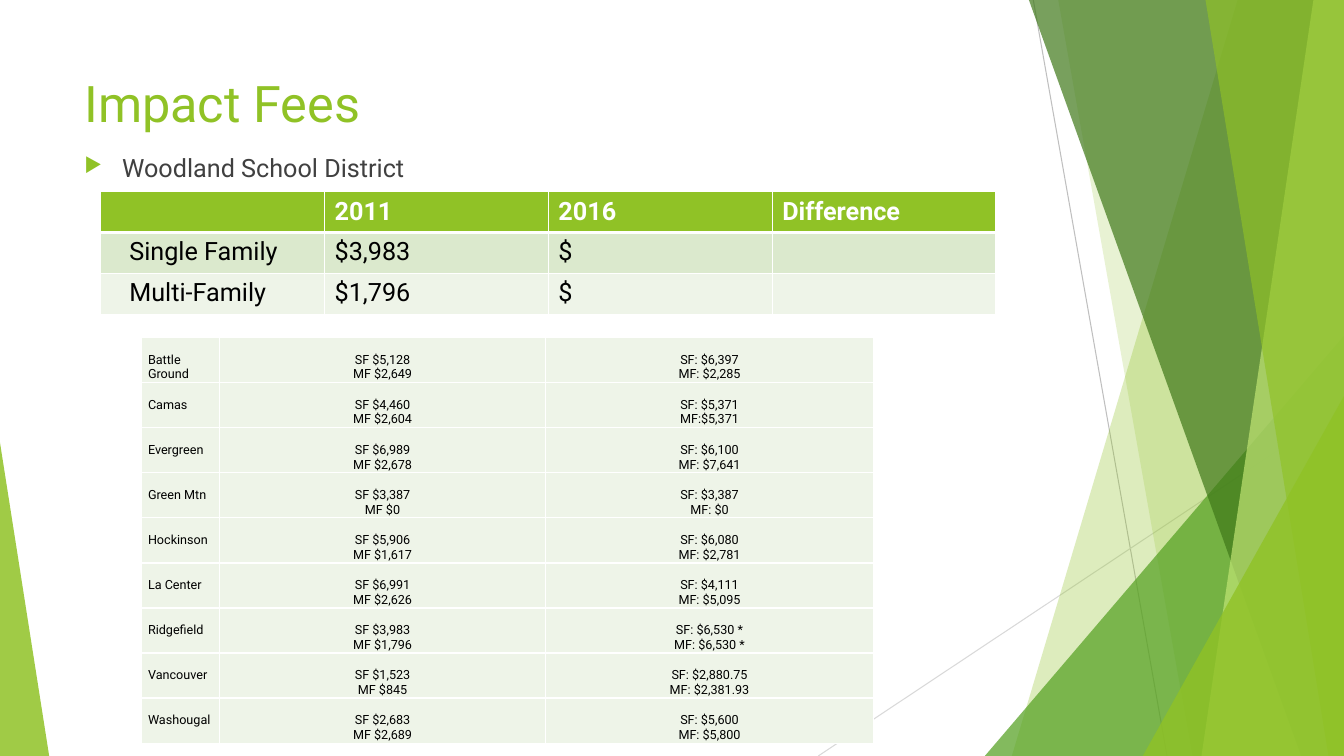
"""Build the Impact Fees slide with its faceted green background and two fee tables."""
import dataclasses
import typing

import lxml.etree
import pptx
import pptx.dml.color
import pptx.enum.shapes
import pptx.enum.text
import pptx.oxml.ns
import pptx.util

Cm = pptx.util.Cm
Pt = pptx.util.Pt
qn = pptx.oxml.ns.qn
ALIGN = pptx.enum.text.PP_ALIGN

WIDTH, HEIGHT = 33.87, 19.05
FONT = "Roboto"
GREEN, WHITE, BLACK, GREY = "90C226", "FFFFFF", "000000", "404040"
BAND_DARK, BAND_LIGHT = "DBE9CD", "EEF4E8"


@dataclasses.dataclass
class Ray:
    start: tuple[float, float]
    end: tuple[float, float]
    color: str


@dataclasses.dataclass
class Facet:
    top_x: float
    bottom_x: float
    color: str
    opacity: int


@dataclasses.dataclass
class Wedge:
    left: float
    top: float
    width: float
    apex: float
    color: str
    opacity: int


@dataclasses.dataclass
class District:
    name: str
    before: str
    after: str


RAYS = [
    Ray((26.04, 0), (29.41, HEIGHT), "BFBFBF"),
    Ray((WIDTH, 10.24), (20.62, HEIGHT), "D9D9D9"),
]
BACKDROP: list[Facet | Wedge] = [
    Facet(31.19, 25.5, GREEN, 30),
    Facet(26.67, 30.05, GREEN, 20),
    Wedge(24.82, 8.46, 9.05, 1, "54A021", 72),
    Facet(25.93, 32.79, "3F7819", 70),
    Facet(33.1, 30.28, "C0E474", 70),
    Facet(30.38, 33.48, GREEN, 65),
    Wedge(28.8, 9.98, 5.07, 1, GREEN, 80),
    Wedge(0, 11.15, 1.24, 0, GREEN, 85),
]
FEES = [
    ["", "2011", "2016", "Difference"],
    ["Single Family", "$3,983", "$", ""],
    ["Multi-Family", "$1,796", "$", ""],
]
DISTRICTS = [
    District("Battle Ground", "SF $5,128\nMF $2,649", "SF: $6,397\nMF: $2,285"),
    District("Camas", "SF $4,460\nMF $2,604", "SF: $5,371\nMF:$5,371"),
    District("Evergreen", "SF $6,989\nMF $2,678", "SF: $6,100\nMF: $7,641"),
    District("Green Mtn", "SF $3,387\nMF $0", "SF: $3,387\nMF: $0"),
    District("Hockinson", "SF $5,906\nMF $1,617", "SF: $6,080\nMF: $2,781"),
    District("La Center", "SF $6,991\nMF $2,626", "SF: $4,111\nMF: $5,095"),
    District("Ridgefield", "SF $3,983\nMF $1,796", "SF: $6,530 *\nMF: $6,530 *"),
    District("Vancouver", "SF $1,523\nMF $845", "SF: $2,880.75\nMF: $2,381.93"),
    District("Washougal", "SF $2,683\nMF $2,689", "SF: $5,600\nMF: $5,800"),
]


def rgb(color: str) -> pptx.dml.color.RGBColor:
    return pptx.dml.color.RGBColor.from_string(color)


def add_child(parent: typing.Any, tag: str, **attributes: str) -> typing.Any:
    return lxml.etree.SubElement(parent, qn(tag), attributes)


def paint(shape: typing.Any, color: str, opacity: int) -> None:
    shape.shadow.inherit = False
    shape.line.fill.background()
    shape.fill.solid()
    shape.fill.fore_color.rgb = rgb(color)
    fill_color = shape.element.spPr.find(qn("a:solidFill"))[0]
    add_child(fill_color, "a:alpha", val=str(opacity * 1000))


def draw_ray(slide: typing.Any, ray: Ray) -> None:
    connector = slide.shapes.add_connector(
        pptx.enum.shapes.MSO_CONNECTOR.STRAIGHT, *map(Cm, ray.start + ray.end))
    connector.line.color.rgb = rgb(ray.color)
    connector.line.width = Pt(0.75)
    add_child(connector.element.spPr, "a:effectLst")


def draw_facet(slide: typing.Any, facet: Facet) -> None:
    builder = slide.shapes.build_freeform(Cm(facet.top_x), Cm(0))
    corners = [(WIDTH, 0), (WIDTH, HEIGHT), (facet.bottom_x, HEIGHT)]
    builder.add_line_segments([(Cm(x), Cm(y)) for x, y in corners], close=True)
    paint(builder.convert_to_shape(), facet.color, facet.opacity)


def draw_wedge(slide: typing.Any, wedge: Wedge) -> None:
    shape = slide.shapes.add_shape(
        pptx.enum.shapes.MSO_SHAPE.ISOSCELES_TRIANGLE, Cm(wedge.left), Cm(wedge.top),
        Cm(wedge.width), Cm(HEIGHT - wedge.top))
    shape.adjustments[0] = wedge.apex
    paint(shape, wedge.color, wedge.opacity)


def write(frame: typing.Any, text: str, *, size: float, color: str = BLACK,
          bold: bool = False, align: typing.Any = ALIGN.LEFT) -> None:
    frame.word_wrap = True
    for index, line in enumerate(text.split("\n")):
        paragraph = frame.add_paragraph() if index else frame.paragraphs[0]
        paragraph.alignment = align
        paragraph.font.size = Pt(size)
        if line:
            run = paragraph.add_run()
            run.text = line
            run.font.name, run.font.size, run.font.bold = FONT, Pt(size), bold
            run.font.color.rgb = rgb(color)


def add_text_box(slide: typing.Any, top: float, height: float) -> typing.Any:
    return slide.shapes.add_textbox(Cm(1.88), Cm(top), Cm(23.88), Cm(height)).text_frame


def add_bullet(paragraph: typing.Any) -> None:
    paragraph.space_before = Pt(10)
    properties = paragraph._p.get_or_add_pPr()
    properties.set("marL", str(Cm(0.95)))
    properties.set("indent", str(-Cm(0.95)))
    add_child(add_child(properties, "a:buClr"), "a:srgbClr", val=GREEN)
    add_child(properties, "a:buSzPct", val="80000")
    add_child(properties, "a:buChar", char="▶")


def add_grid(slide: typing.Any, left: float, top: float, columns: list[float],
             row_height: float, row_count: int) -> typing.Any:
    table = slide.shapes.add_table(
        row_count, len(columns), Cm(left), Cm(top), Cm(sum(columns)),
        Cm(row_height * row_count)).table
    table.first_row = table.horz_banding = False
    for column, width in zip(table.columns, columns):
        column.width = Cm(width)
    for row in table.rows:
        row.height = Cm(row_height)
    return table


def style_cell(cell: typing.Any, fill: str, top_border: float = 1, bottom_border: float = 1) -> None:
    properties = cell._tc.get_or_add_tcPr()
    for side, width in {"L": 1, "R": 1, "T": top_border, "B": bottom_border}.items():
        border = add_child(properties, f"a:ln{side}", w=str(Pt(width)))
        add_child(add_child(border, "a:solidFill"), "a:srgbClr", val=WHITE)
    cell.fill.solid()
    cell.fill.fore_color.rgb = rgb(fill)


def draw_fees(slide: typing.Any) -> None:
    table = add_grid(slide, 2.54, 4.83, [5.64] * 4, 1.03, len(FEES))
    for row, values in enumerate(FEES):
        for column, text in enumerate(values):
            cell = table.cell(row, column)
            style_cell(cell, (GREEN, BAND_DARK, BAND_LIGHT)[row],
                       top_border=3 if row == 1 else 1, bottom_border=1 if row else 3)
            if row and not column:
                cell.margin_left = Cm(0.72)
            write(cell.text_frame, text, size=18, color=BLACK if row else WHITE, bold=not row)


def draw_districts(slide: typing.Any) -> None:
    table = add_grid(slide, 3.56, 8.51, [1.97, 8.22, 8.26], 1.12, len(DISTRICTS))
    for row, district in enumerate(DISTRICTS):
        for column, text in enumerate((district.name, district.before, district.after)):
            cell = table.cell(row, column)
            style_cell(cell, BAND_LIGHT)
            cell.margin_left = cell.margin_right = Cm(0.17)
            cell.margin_top, cell.margin_bottom = Cm(0.37), Cm(0)
            write(cell.text_frame, text, size=9, align=ALIGN.CENTER if column else ALIGN.LEFT)


def main() -> None:
    presentation = pptx.Presentation()
    presentation.slide_width, presentation.slide_height = Cm(WIDTH), Cm(HEIGHT)
    slide = presentation.slides.add_slide(presentation.slide_layouts[6])
    for ray in RAYS:
        draw_ray(slide, ray)
    for piece in BACKDROP:
        if isinstance(piece, Facet):
            draw_facet(slide, piece)
        else:
            draw_wedge(slide, piece)
    write(add_text_box(slide, 1.7, 3.66), "Impact Fees", size=36, color=GREEN)
    body = add_text_box(slide, 3.71, 13.08)
    write(body, "Woodland School District", size=18, color=GREY)
    add_bullet(body.paragraphs[0])
    draw_fees(slide)
    draw_districts(slide)
    presentation.save("out.pptx")


if __name__ == "__main__":
    main()
